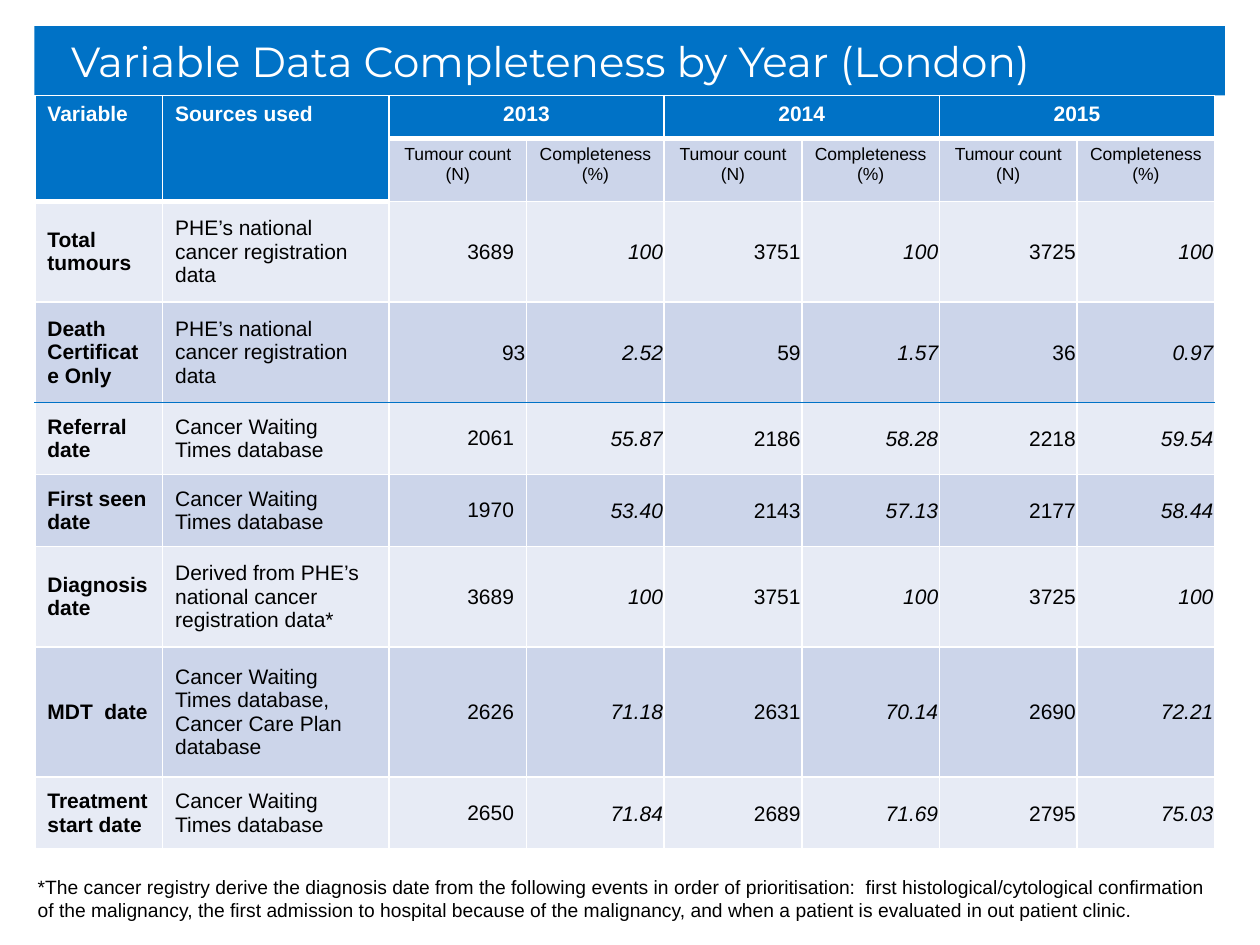
"""Build the slide on variable data completeness by year in London."""
from lxml.etree import SubElement
from pptx import Presentation
from pptx.dml.color import RGBColor
from pptx.enum.shapes import MSO_SHAPE as Shape
from pptx.enum.text import MSO_ANCHOR as Anchor, MSO_AUTO_SIZE as AutoSize, PP_ALIGN as Align
from pptx.oxml.ns import qn
from pptx.util import Pt

BLUE = RGBColor(0x00, 0x72, 0xC6)
LIGHT = RGBColor(0xE7, 0xEB, 0xF5)
DARK = RGBColor(0xCC, 0xD5, 0xEA)
WHITE = RGBColor(0xFF, 0xFF, 0xFF)
BLACK = RGBColor(0x00, 0x00, 0x00)

TITLE = "Variable Data Completeness by Year (London)"
FOOTNOTE = (
    "*The cancer registry derive the diagnosis date from the following events in order of "
    "prioritisation:  first histological/cytological confirmation of the malignancy, the first "
    "admission to hospital because of the malignancy, and when a patient is evaluated in out "
    "patient clinic."
)
LABELS = ["Variable", "Sources used"]
YEARS = ["2013", "2014", "2015"]
MEASURES = ["Tumour count\n(N)", "Completeness (%)"]
REGISTRATION = "PHE’s national cancer registration data"
WAITING = "Cancer Waiting Times database"
RECORDS = [
    ("Total tumours", REGISTRATION, "3689", "100", "3751", "100", "3725", "100"),
    ("Death Certificate Only", REGISTRATION, "93", "2.52", "59", "1.57", "36", "0.97"),
    ("Referral date", WAITING, "2061", "55.87", "2186", "58.28", "2218", "59.54"),
    ("First seen date", WAITING, "1970", "53.40", "2143", "57.13", "2177", "58.44"),
    ("Diagnosis date", "Derived from PHE’s national cancer registration data*",
     "3689", "100", "3751", "100", "3725", "100"),
    ("MDT  date", "Cancer Waiting Times database, Cancer Care Plan database",
     "2626", "71.18", "2631", "70.14", "2690", "72.21"),
    ("Treatment start date", WAITING, "2650", "71.84", "2689", "71.69", "2795", "75.03"),
]
COLUMN_WIDTHS = [73, 129.4] + [78.65] * 6
ROW_HEIGHTS = [24.5, 36, 57.4, 57.4, 41.2, 41.2, 57.4, 74.4, 41.2]
DEATH_ROW = 3


def set_text(frame, text, size, color, font="Arial", align=Align.LEFT, bold=False, italic=False):
    frame.text = text
    for paragraph in frame.paragraphs:
        paragraph.alignment = align
        paragraph.font.name = font
        paragraph.font.size = Pt(size)
        paragraph.font.color.rgb = color
        paragraph.font.bold = bold
        paragraph.font.italic = italic


def horizontal_edge(boundary, column):
    if boundary == (2 if column < 2 else 1):
        return WHITE, 3
    return (BLUE if boundary == DEATH_ROW + 1 else WHITE), 1


def set_borders(cell, row, column):
    bottom = row + (cell.span_height if cell.is_merge_origin else 1)
    edges = {
        "a:lnL": (WHITE, 1),
        "a:lnR": (WHITE, 1),
        "a:lnT": horizontal_edge(row, column),
        "a:lnB": horizontal_edge(bottom, column),
    }
    properties = cell._tc.get_or_add_tcPr()
    for tag, (color, width) in edges.items():
        line = SubElement(properties, qn(tag), w=str(Pt(width)))
        fill = SubElement(line, qn("a:solidFill"))
        SubElement(fill, qn("a:srgbClr"), val=str(color))


def fill_cell(cell, row, column, text):
    is_header = row == 0 or (row == 1 and column < 2)
    is_number = row > 1 and column > 1
    set_borders(cell, row, column)
    cell.fill.solid()
    cell.fill.fore_color.rgb = BLUE if is_header else DARK if row % 2 else LIGHT
    if row > 1:
        cell.vertical_anchor = Anchor.MIDDLE
    if is_number and (column > 2 or row == DEATH_ROW):
        cell.margin_left = cell.margin_top = cell.margin_right = Pt(0.7)
        cell.margin_bottom = 0
    if text:
        align = Align.LEFT if column < 2 else Align.RIGHT if is_number else Align.CENTER
        set_text(cell.text_frame, text, 10 if row == 1 else 12, WHITE if is_header else BLACK,
                 align=align, bold=is_header or column == 0,
                 italic=is_number and column % 2 == 1)


def add_title(slide):
    banner = slide.shapes.add_shape(Shape.RECTANGLE, Pt(19.6), Pt(15), Pt(680.4), Pt(39.6))
    banner.shadow.inherit = False
    banner.fill.solid()
    banner.fill.fore_color.rgb = BLUE
    banner.line.fill.background()
    frame = banner.text_frame
    frame.word_wrap = True
    frame.margin_left = Pt(21)
    frame.vertical_anchor = Anchor.MIDDLE
    set_text(frame, TITLE, 24, WHITE, font="Montserrat")


def add_completeness_table(slide):
    year_cells = [text for year in YEARS for text in (year, "")]
    rows = [LABELS + year_cells, ["", ""] + MEASURES * len(YEARS), *RECORDS]
    table = slide.shapes.add_table(
        len(rows), len(COLUMN_WIDTHS), Pt(19.9), Pt(54.7),
        Pt(sum(COLUMN_WIDTHS)), Pt(sum(ROW_HEIGHTS))).table
    for column, width in zip(table.columns, COLUMN_WIDTHS):
        column.width = Pt(width)
    for row, height in zip(table.rows, ROW_HEIGHTS):
        row.height = Pt(height)
    for column in range(2):
        table.cell(0, column).merge(table.cell(1, column))
    for column in range(2, len(COLUMN_WIDTHS), 2):
        table.cell(0, column).merge(table.cell(0, column + 1))
    for row, texts in enumerate(rows):
        for column, text in enumerate(texts):
            fill_cell(table.cell(row, column), row, column, text)


def add_footnote(slide):
    frame = slide.shapes.add_textbox(Pt(14.4), Pt(496.8), Pt(686), Pt(33.8)).text_frame
    frame.word_wrap = True
    frame.auto_size = AutoSize.SHAPE_TO_FIT_TEXT
    set_text(frame, FOOTNOTE, 11, BLACK)


def main():
    presentation = Presentation()
    presentation.slide_width, presentation.slide_height = Pt(720), Pt(540)
    slide = presentation.slides.add_slide(presentation.slide_layouts[6])
    add_title(slide)
    add_completeness_table(slide)
    add_footnote(slide)
    presentation.save("out.pptx")


if __name__ == "__main__":
    main()
